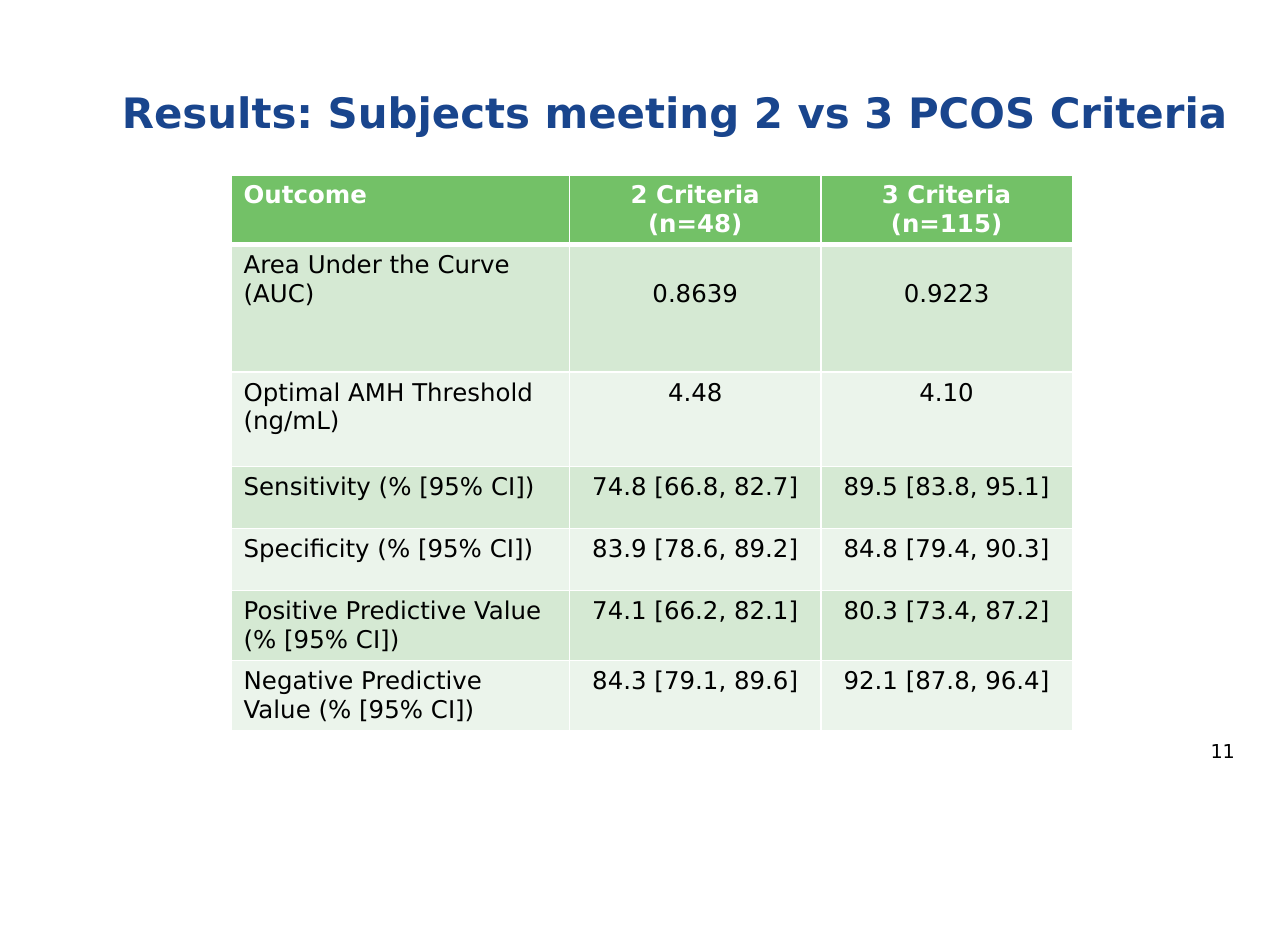
from pptx import Presentation
from pptx import util as u
from pptx.dml import color
from pptx.enum import text
from pptx.oxml import ns
from lxml import etree

LEFT, CENTER, RIGHT = text.PP_ALIGN.LEFT, text.PP_ALIGN.CENTER, text.PP_ALIGN.RIGHT


def rgb(value):
    return color.RGBColor.from_string(value)


class Deck:
    font = "DejaVu Sans"
    navy, green, white, black = "19458D", "73C167", "FFFFFF", "000000"
    bands = ("D5E9D3", "EBF4EB")

    def __init__(self, width, height):
        self.prs = Presentation()
        self.prs.slide_width, self.prs.slide_height = u.Pt(width), u.Pt(height)
        self.s = self.prs.slides.add_slide(self.prs.slide_layouts[5])

    def add_text(self, tf, lines, size, hue, bold=False, align=LEFT, spacing=1.0):
        for i, line in enumerate(lines):
            p = tf.paragraphs[0] if i == 0 else tf.add_paragraph()
            p.alignment, p.line_spacing = align, spacing
            r = p.add_run()
            r.text = line
            r.font.name, r.font.size, r.font.bold = self.font, u.Pt(size), bold
            r.font.color.rgb = rgb(hue)

    def frame(self, sp):
        tf = sp.text_frame
        tf.word_wrap, tf.auto_size = True, text.MSO_AUTO_SIZE.NONE
        tf.margin_left = tf.margin_top = tf.margin_right = tf.margin_bottom = 0
        tf.vertical_anchor = text.MSO_ANCHOR.BOTTOM
        return tf

    def title(self, line, x, y, w, h):
        sp = self.s.shapes.title
        sp.left, sp.top, sp.width, sp.height = map(u.Pt, (x, y, w, h))
        self.add_text(self.frame(sp), [line], 24, self.navy, True, spacing=0.85)

    def label(self, line, x, y, w, h):
        sp = self.s.shapes.add_textbox(*map(u.Pt, (x, y, w, h)))
        self.add_text(self.frame(sp), [line], 11, self.black, align=RIGHT, spacing=1.1)

    def border(self, cell, side, width):
        tag = ns.qn("a:ln" + side)
        ln = etree.SubElement(cell._tc.get_or_add_tcPr(), tag, w=str(u.Pt(width)))
        fill = etree.SubElement(ln, ns.qn("a:solidFill"))
        etree.SubElement(fill, ns.qn("a:srgbClr"), val=self.white)

    def table(self, rows, x, y, widths, heights, spacings):
        gf = self.s.shapes.add_table(len(rows), len(widths), u.Pt(x), u.Pt(y),
                                     u.Pt(sum(widths)), u.Pt(sum(heights)))
        tbl = gf.table
        for col, width in zip(tbl.columns, widths):
            col.width = u.Pt(width)
        for i, row in enumerate(rows):
            tbl.rows[i].height = u.Pt(heights[i])
            head = i == 0
            for j, value in enumerate(row):
                cell = tbl.cell(i, j)
                for side in "LRTB":
                    thick = (i, side) in ((0, "B"), (1, "T"))
                    self.border(cell, side, 3 if thick else 1)
                cell.fill.solid()
                cell.fill.fore_color.rgb = rgb(self.green if head else self.bands[(i - 1) % 2])
                self.add_text(cell.text_frame, value.split("\n"), 14,
                              self.white if head else self.black, head,
                              CENTER if j else LEFT, spacings.get(i, 1.0) if j else 1.0)


def main():
    deck = Deck(738, 540)
    deck.title("Results: Subjects meeting 2 vs 3 PCOS Criteria", 69.8, 19.4, 636.5, 59)
    deck.table([
        ("Outcome", "2 Criteria\n(n=48)", "3 Criteria\n(n=115)"),
        ("Area Under the Curve (AUC)", "0.8639", "0.9223"),
        ("Optimal AMH Threshold (ng/mL)", "4.48", "4.10"),
        ("Sensitivity (% [95% CI])", "74.8 [66.8, 82.7]", "89.5 [83.8, 95.1]"),
        ("Specificity (% [95% CI])", "83.9 [78.6, 89.2]", "84.8 [79.4, 90.3]"),
        ("Positive Predictive Value (% [95% CI])", "74.1 [66.2, 82.1]", "80.3 [73.4, 87.2]"),
        ("Negative Predictive Value (% [95% CI])", "84.3 [79.1, 89.6]", "92.1 [87.8, 96.4]"),
    ], 132.4, 100.2, (194, 144, 144), (39.8, 73, 54, 35.6, 35.6, 40, 40), {1: 2.0})
    deck.label("11", 535.7, 422.6, 172, 14.4)
    deck.prs.save("out.pptx")


if __name__ == "__main__":
    main()
